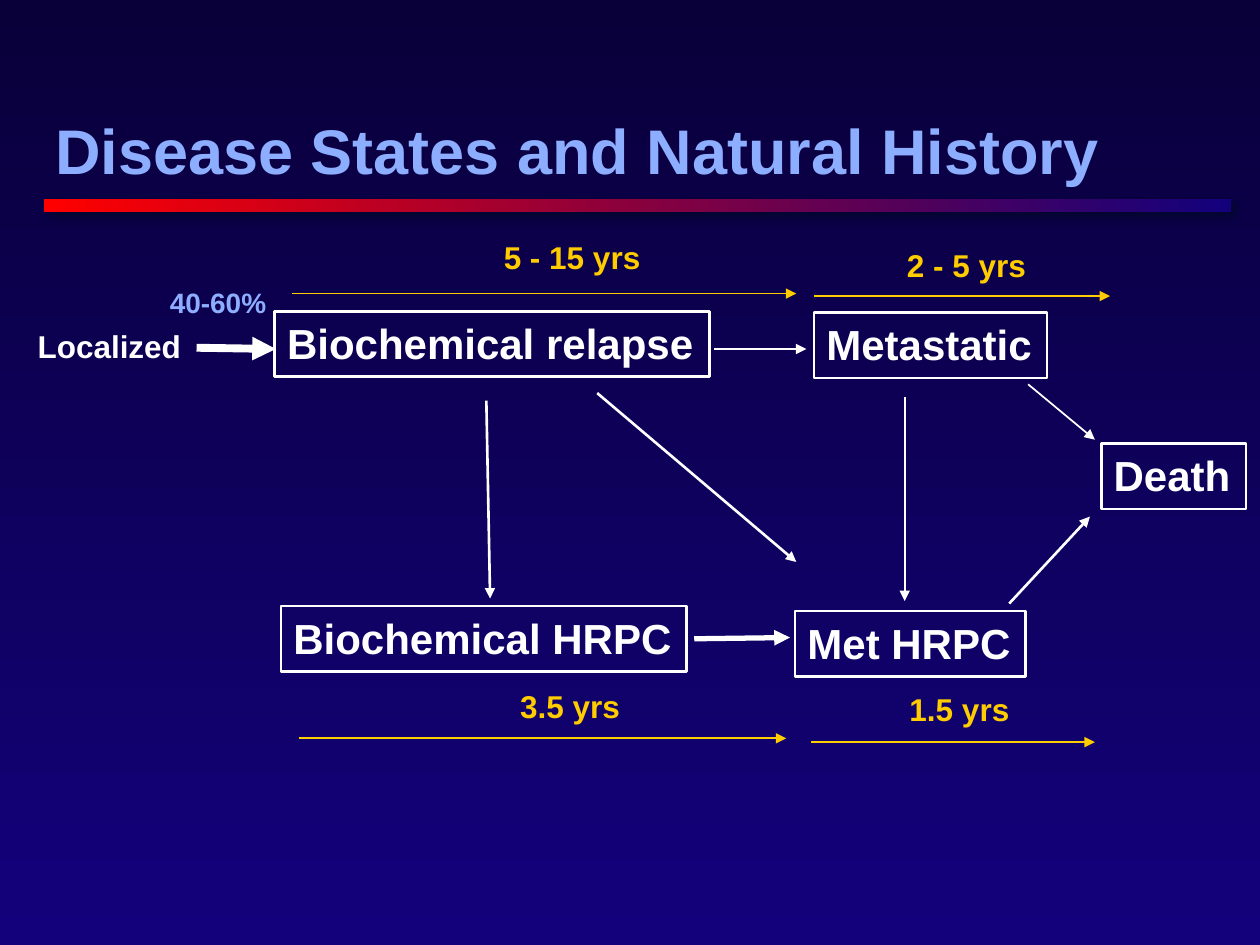
from dataclasses import dataclass

from lxml import etree
from pptx import Presentation
from pptx.dml.color import RGBColor
from pptx.enum.shapes import MSO_CONNECTOR as Conn, MSO_SHAPE as Shape
from pptx.enum.text import MSO_ANCHOR as Anchor, MSO_AUTO_SIZE as AutoSize, PP_ALIGN as Align
from pptx.oxml import parse_xml
from pptx.oxml.ns import nsdecls, qn
from pptx.util import Emu, Pt

PX = 9144  # 100 px to the inch


@dataclass(frozen=True)
class Theme:
    font: str = "Arial"
    white: str = "FFFFFF"
    accent: str = "8DAEFF"
    gold: str = "FFCC00"
    red: str = "FF0000"
    night: str = "090039"
    navy: str = "13017C"
    shadow: str = "000B26"
    title: int = 36
    state: int = 24
    label: int = 18
    small: int = 16


@dataclass(frozen=True)
class Box:
    x: int
    y: int
    w: int
    h: int

    def inner(self, x, y, w, h):
        return Box(self.x + x, self.y + y, w, h)

    def emu(self):
        return [Emu(v * PX) for v in (self.x, self.y, self.w, self.h)]


THEME = Theme()
STATE_H = 52

# text, x, y, width
STATES = [
    ("Biochemical relapse", 198, 67, 345),
    ("Metastatic", 626, 68, 185),
    ("Biochemical HRPC", 203, 301, 322),
    ("Met HRPC", 611, 305, 183),
    ("Death", 854, 172, 115),
]
# start x, start y, end x, end y, line width
TRANSITIONS = [
    (136, 96, 199, 97, 4.5),   # localized to relapse
    (547, 97, 620, 97, 1.5),   # relapse to metastatic
    (366, 138, 369, 295, 1.5), # relapse to biochemical HRPC
    (454, 132, 612, 266, 1.5), # relapse to met HRPC
    (698, 135, 698, 297, 1),   # metastatic to met HRPC
    (796, 125, 849, 169, 1),   # metastatic to death
    (531, 327, 607, 326, 3),   # biochemical HRPC to met HRPC
    (781, 299, 845, 230, 1.5), # met HRPC to death
]
# text, arrow start x, end x, y, label x, y, width
DURATIONS = [
    ("5 - 15 yrs", 212, 612, 53, 370, 4, 130),
    ("2 - 5 yrs", 626, 861, 55, 690, 10, 116),
    ("3.5 yrs", 217, 604, 406, 383, 360, 100),
    ("1.5 yrs", 624, 849, 409, 692, 363, 100),
]


def rgb(color):
    return RGBColor.from_string(color)


def set_gradient(fill, start, end, angle):
    fill.gradient()
    fill.gradient_angle = angle
    for stop, color, position in zip(fill.gradient_stops, (start, end), (0, 1)):
        stop.color.rgb = rgb(color)
        stop.position = position


def add_run(p, text, size, color):
    r = p.add_run()
    r.text = text
    r.font.name = THEME.font
    r.font.size = Pt(size)
    r.font.bold = True
    r.font.color.rgb = rgb(color)


def write_line(sp, text, size, color):
    """Set one unwrapped, left-aligned line in a shape that fits its text."""
    tf = sp.text_frame
    tf.word_wrap = False
    tf.auto_size = AutoSize.SHAPE_TO_FIT_TEXT
    tf.vertical_anchor = Anchor.TOP
    p = tf.paragraphs[0]
    p.alignment = Align.LEFT
    add_run(p, text, size, color)


def add_label(s, box, text, size, color):
    write_line(s.shapes.add_textbox(*box.emu()), text, size, color)


def add_state(s, box, text):
    sp = s.shapes.add_shape(Shape.RECTANGLE, *box.emu())
    sp.shadow.inherit = False
    sp.fill.background()
    sp.line.color.rgb = rgb(THEME.white)
    sp.line.width = Pt(1.5)
    write_line(sp, text, THEME.state, THEME.white)


def add_arrow(s, box, x1, y1, x2, y2, width, color):
    ends = (box.x + x1, box.y + y1, box.x + x2, box.y + y2)
    arrow = s.shapes.add_connector(Conn.STRAIGHT, *(Emu(v * PX) for v in ends))
    arrow.line.color.rgb = rgb(color)
    arrow.line.width = Pt(width)
    props = arrow._element.spPr
    etree.SubElement(props.find(qn("a:ln")), qn("a:tailEnd"), type="triangle")
    etree.SubElement(props, qn("a:effectLst"))


def add_heading(s, box):
    """Place the title, with the fading rule beneath it."""
    rule = s.shapes.add_shape(Shape.RECTANGLE, *box.inner(1, 87, 942, 10).emu())
    set_gradient(rule.fill, THEME.red, THEME.navy, 0)
    rule.line.fill.background()
    rule.shadow.inherit = False
    rule._element.spPr.find(qn("a:effectLst")).append(parse_xml(
        f'<a:outerShdw {nsdecls("a")} blurRad="{Pt(5)}" dist="{Pt(3)}" dir="2700000">'
        f'<a:srgbClr val="{THEME.shadow}"><a:alpha val="75000"/></a:srgbClr></a:outerShdw>'))

    title = s.shapes.title
    title.left, title.top, title.width, title.height = box.inner(0, 0, 934, 83).emu()
    tf = title.text_frame
    tf.word_wrap = True
    tf.auto_size = AutoSize.NONE
    tf.vertical_anchor = Anchor.BOTTOM
    p = tf.paragraphs[0]
    p.alignment = Align.LEFT
    p.line_spacing = 0.9
    add_run(p, "Disease States and Natural History", THEME.title, THEME.accent)


def add_state_diagram(s, box):
    add_label(s, box.inner(0, 75, 142, 40), "Localized", THEME.label, THEME.white)
    add_label(s, box.inner(105, 42, 98, 37), "40-60%", THEME.small, THEME.accent)
    for text, x, y, w in STATES:
        add_state(s, box.inner(x, y, w, STATE_H), text)
    for transition in TRANSITIONS:
        add_arrow(s, box, *transition, THEME.white)


def add_durations(s, box):
    for text, x1, x2, y, label_x, label_y, w in DURATIONS:
        add_arrow(s, box, x1, y, x2, y, 1, THEME.gold)
        add_label(s, box.inner(label_x, label_y, w, 40), text, THEME.label, THEME.gold)


def main():
    prs = Presentation()
    prs.slide_width, prs.slide_height = Emu(1000 * PX), Emu(750 * PX)
    s = prs.slides.add_slide(prs.slide_layouts[5])
    set_gradient(s.background.fill, THEME.night, THEME.navy, 270)
    add_heading(s, Box(34, 71, 943, 97))
    diagram = Box(20, 180, 969, 410)
    add_state_diagram(s, diagram)
    add_durations(s, diagram)
    prs.save("out.pptx")


if __name__ == "__main__":
    main()
